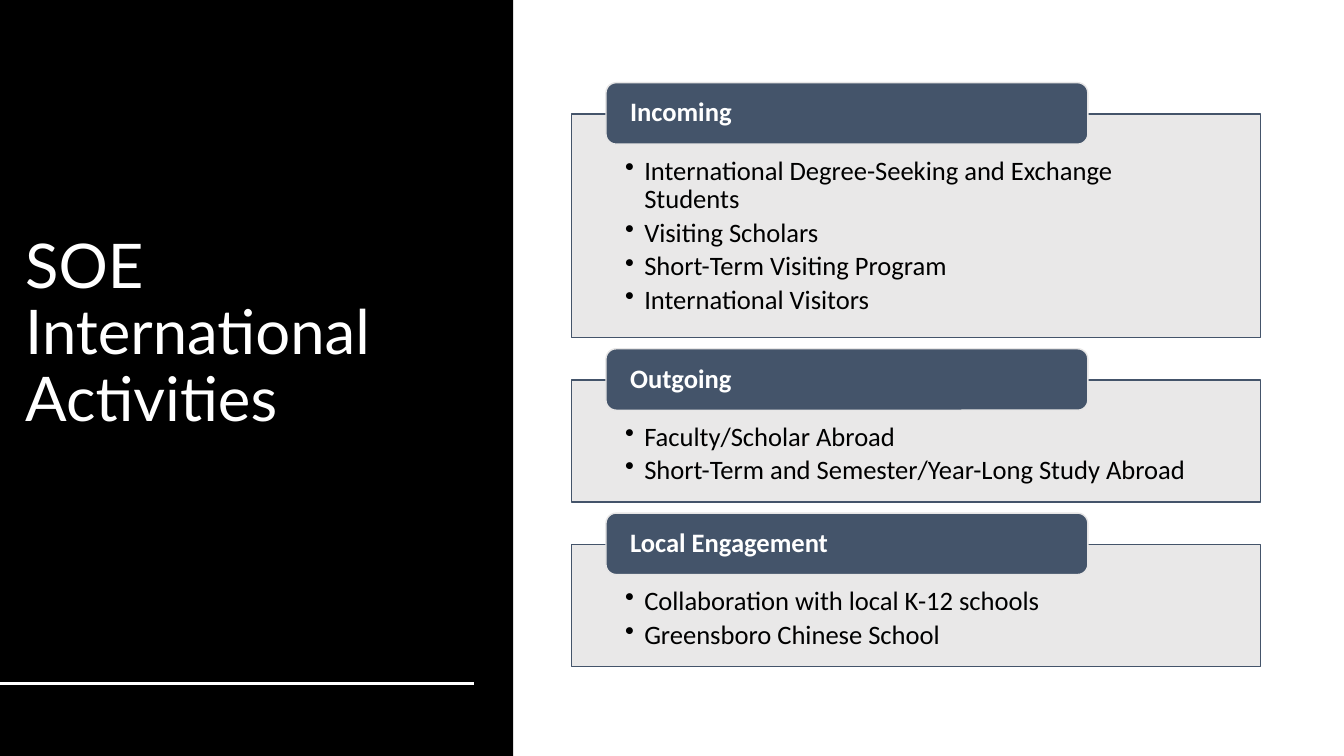
import pptx
import pptx.dml.color
import pptx.enum.shapes
import pptx.enum.text
import pptx.oxml
import pptx.oxml.ns
import pptx.util
from lxml import etree

Inches = pptx.util.Inches
Pt = pptx.util.Pt
SHAPES = pptx.enum.shapes.MSO_SHAPE
ANCHOR = pptx.enum.text.MSO_ANCHOR
COLORS = {"black": "000000", "white": "FFFFFF", "slate": "44546A", "gray": "E7E6E6"}
RGB = {name: pptx.dml.color.RGBColor.from_string(value) for name, value in COLORS.items()}

BOX_LEFT, BOX_WIDTH = 5.67, 6.83
HEADER_LEFT, HEADER_WIDTH, HEADER_HEIGHT = 6.01, 4.78, 0.61
HEADER_RISE = 0.31
BOX_GAP = 0.42
sections = [
    ("Incoming", 2.22, [
        "International Degree-Seeking and Exchange Students",
        "Visiting Scholars",
        "Short-Term Visiting Program",
        "International Visitors",
    ]),
    ("Outgoing", 1.21, [
        "Faculty/Scholar Abroad",
        "Short-Term and Semester/Year-Long Study Abroad",
    ]),
    ("Local Engagement", 1.21, [
        "Collaboration with local K-12 schools",
        "Greensboro Chinese School",
    ]),
]


def add_box(kind, left, top, width, height, fill, line=None):
    shape = slide.shapes.add_shape(kind, Inches(left), Inches(top), Inches(width), Inches(height))
    shape.shadow.inherit = False
    shape.fill.solid()
    shape.fill.fore_color.rgb = RGB[fill]
    if line:
        shape.line.color.rgb = RGB[line]
        shape.line.width = Pt(1)
    else:
        shape.line.fill.background()
    return shape


def write_text(shape, lines, margins, anchor, font, bulleted=False):
    """Fill a shape with left-aligned paragraphs; margins are left, top, right, bottom."""
    frame = shape.text_frame
    frame.word_wrap = True
    frame.auto_size = pptx.enum.text.MSO_AUTO_SIZE.NONE
    frame.vertical_anchor = anchor
    for side, margin in zip(("left", "top", "right", "bottom"), margins):
        setattr(frame, f"margin_{side}", Inches(margin))
    frame.text = "\n".join(lines)
    for paragraph in frame.paragraphs:
        paragraph.alignment = pptx.enum.text.PP_ALIGN.LEFT
        paragraph.line_spacing = 0.9
        if bulleted:
            paragraph.level = 1
            paragraph.space_after = Pt(3.4)
            properties = paragraph._p.get_or_add_pPr()
            properties.set("marL", str(Inches(0.19)))
            properties.set("indent", str(Inches(-0.19)))
            etree.SubElement(properties, pptx.oxml.ns.qn("a:buChar")).set("char", "•")
        for run in paragraph.runs:
            run.font.color.rgb = RGB[font["color"]]
            for name in ("name", "size", "bold"):
                setattr(run.font, name, font[name])


presentation = pptx.Presentation()
presentation.slide_width = Inches(13.33)
presentation.slide_height = Inches(7.5)
slide = presentation.slides.add_slide(presentation.slide_layouts[5])

# Black title panel
title = slide.shapes.title
title.left, title.top = Inches(0.15), Inches(0.61)
title.width, title.height = Inches(4.59), Inches(5.42)
write_text(title, ["SOE International Activities"], (0.1, 0.05, 0.1, 0.05), ANCHOR.MIDDLE,
           {"name": "Lato", "size": Pt(44), "bold": False, "color": "white"})
panel = add_box(SHAPES.RECTANGLE, 0, 0, 5.09, 7.5, "black")
title.element.addprevious(panel.element)

rule = slide.shapes.add_connector(pptx.enum.shapes.MSO_CONNECTOR.STRAIGHT,
                                  Inches(0), Inches(6.78), Inches(4.7), Inches(6.78))
rule.line.color.rgb = RGB["white"]
rule.line.width = Pt(2)
etree.SubElement(rule.element.spPr, pptx.oxml.ns.qn("a:effectLst"))

# Activity sections
body_font = {"name": "Calibri", "size": Pt(19), "bold": False, "color": "black"}
header_font = {"name": "Calibri", "size": Pt(19), "bold": True, "color": "white"}
top = 1.13
for heading, height, activities in sections:
    box = add_box(SHAPES.RECTANGLE, BOX_LEFT, top, BOX_WIDTH, height, "gray", "slate")
    fill_color = box.element.spPr.find(".//" + pptx.oxml.ns.qn("a:srgbClr"))
    etree.SubElement(fill_color, pptx.oxml.ns.qn("a:alpha")).set("val", "90000")
    write_text(box, activities, (0.53, 0.43, 0.53, 0.15), ANCHOR.TOP, body_font, bulleted=True)

    header = add_box(SHAPES.ROUNDED_RECTANGLE, HEADER_LEFT, top - HEADER_RISE,
                     HEADER_WIDTH, HEADER_HEIGHT, "slate", "gray")
    write_text(header, [heading], (0.21, 0, 0.21, 0), ANCHOR.MIDDLE, header_font)
    top += height + BOX_GAP

presentation.save("out.pptx")
